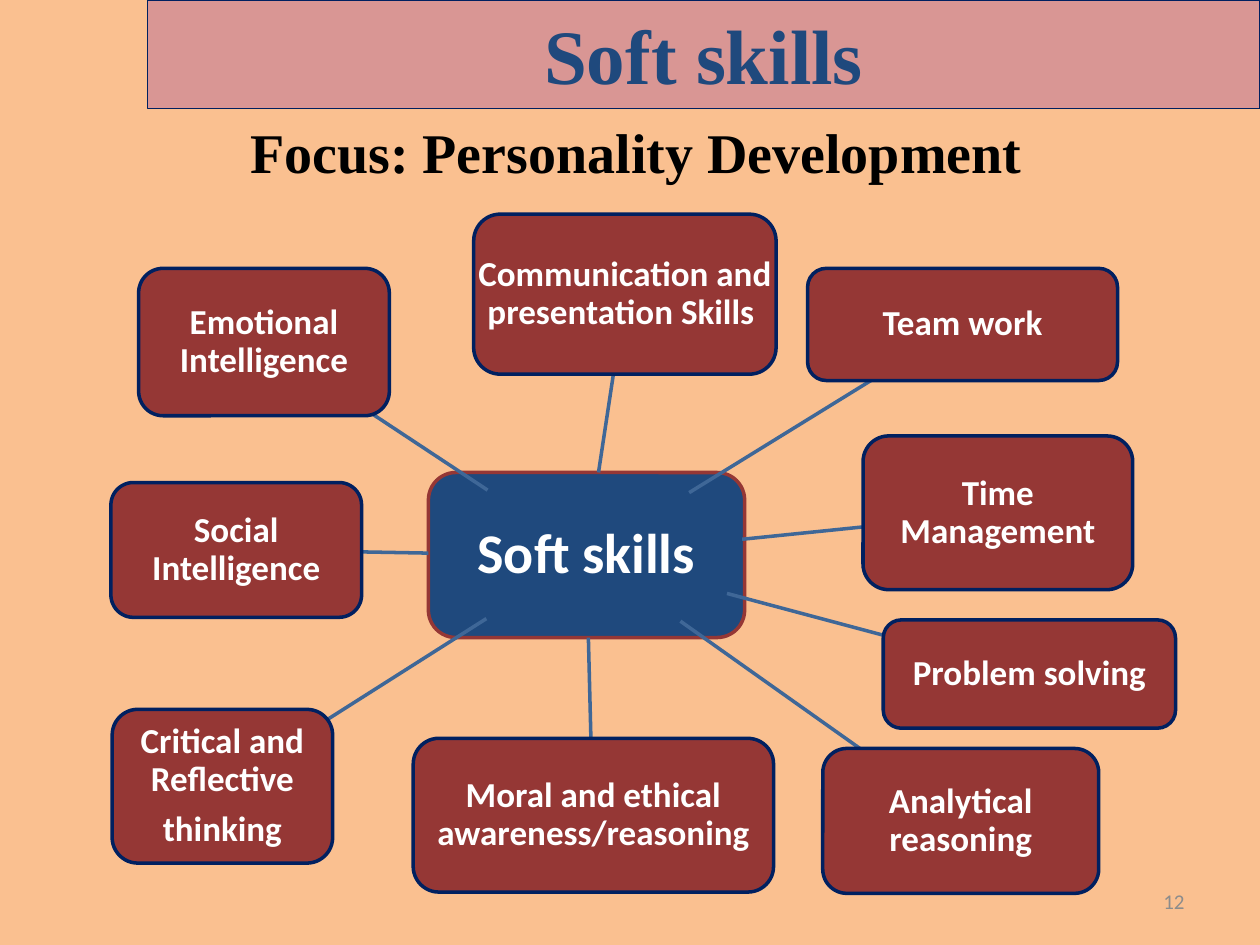
from pptx import Presentation
from pptx.dml.color import RGBColor
from pptx.enum.shapes import MSO_CONNECTOR, MSO_SHAPE
from pptx.enum.text import MSO_ANCHOR, PP_ALIGN
from pptx.oxml.ns import qn
from pptx.util import Inches, Pt
from lxml import etree


def rgb(value):
    return RGBColor.from_string(value)


def write(box, text, size, color, font="Calibri", bold=True, align=PP_ALIGN.CENTER,
          anchor=MSO_ANCHOR.MIDDLE, spacing=None, after=0, inset=None):
    frame = box.text_frame
    frame.word_wrap = True
    frame.vertical_anchor = anchor
    if inset is not None:
        frame.margin_left = frame.margin_right = Inches(inset)
        frame.margin_top = frame.margin_bottom = Inches(0.01)
    frame.text = text
    for para in frame.paragraphs:
        para.alignment = align
        para.line_spacing = spacing
        para.space_after = Pt(after)
        for span in para.runs:
            span.font.name = font
            span.font.size = Pt(size)
            span.font.bold = bold
            span.font.color.rgb = rgb(color)


deck = Presentation()
deck.slide_width, deck.slide_height = Inches(10), Inches(7.5)
page = deck.slides.add_slide(deck.slide_layouts[5])
page.background.fill.solid()
page.background.fill.fore_color.rgb = rgb("FAC090")

# Title banner
title = page.shapes.title
title.left, title.top, title.width, title.height = map(Inches, (1.17, 0, 8.83, 0.86))
title.fill.solid()
title.fill.fore_color.rgb = rgb("D99694")
title.line.color.rgb = rgb("002060")
title.line.width = Pt(0.75)
write(title, "Soft skills", 44, "1F497D", font="Times New Roman")

# Hub first, then each skill: text, box place, line from hub to box
nodes = [
    ("Soft skills", (3.4, 3.75, 2.51, 1.31), None),
    ("Communication and presentation Skills ", (3.76, 1.7, 2.4, 1.27), (4.75, 3.75, 4.87, 2.96)),
    ("Team work", (6.41, 2.13, 2.46, 0.89), (5.47, 3.91, 7.01, 2.96)),
    ("Analytical reasoning", (6.53, 5.94, 2.19, 1.15), (5.4, 4.93, 6.98, 6.05)),
    ("Problem solving", (7.01, 4.92, 2.32, 0.86), (5.77, 4.71, 7.23, 5.1)),
    ("Moral and ethical awareness/reasoning", (3.28, 5.86, 2.86, 1.22), (4.67, 5.06, 4.69, 5.86)),
    ("Critical and Reflective\nthinking", (0.89, 5.63, 1.75, 1.22), (3.86, 4.91, 2.41, 5.83)),
    ("Emotional Intelligence", (1.1, 2.13, 1.99, 1.17), (3.87, 3.89, 2.75, 3.15)),
    ("Social Intelligence", (0.88, 3.83, 1.99, 1.07), (3.4, 4.39, 2.86, 4.38)),
    ("Time Management", (6.85, 3.46, 2.14, 1.22), (5.89, 4.28, 6.87, 4.18)),
]
for text, place, spoke in nodes:
    if spoke:
        line = page.shapes.add_connector(MSO_CONNECTOR.STRAIGHT, *map(Inches, spoke))
        line.line.color.rgb = rgb("3F6797")
        line.line.width = Pt(2)
        etree.SubElement(line._element.spPr, qn("a:effectLst"))
        fill, border, size = "953735", "002060", 20
    else:
        fill, border, size = "1F497D", "953735", 32
    box = page.shapes.add_shape(MSO_SHAPE.ROUNDED_RECTANGLE, *map(Inches, place))
    box.shadow.inherit = False
    box.fill.solid()
    box.fill.fore_color.rgb = rgb(fill)
    box.line.color.rgb = rgb(border)
    box.line.width = Pt(2)
    # The negative inset lets long words use the width lost to the rounded corners
    write(box, text, size, "FFFFFF", spacing=0.9, after=7, inset=-0.05)

# Slide number
number = page.shapes.add_textbox(Inches(7.17), Inches(6.95), Inches(2.33), Inches(0.4))
write(number, "12", 12, "8C8C8C", bold=False, align=PP_ALIGN.RIGHT)

# Focus line
focus = page.shapes.add_textbox(Inches(0.91), Inches(0.62), Inches(8.28), Inches(0.83))
write(focus, "Focus: Personality Development", 32, "000000", font="Times New Roman",
      anchor=MSO_ANCHOR.TOP, spacing=1.5)

deck.save("out.pptx")
